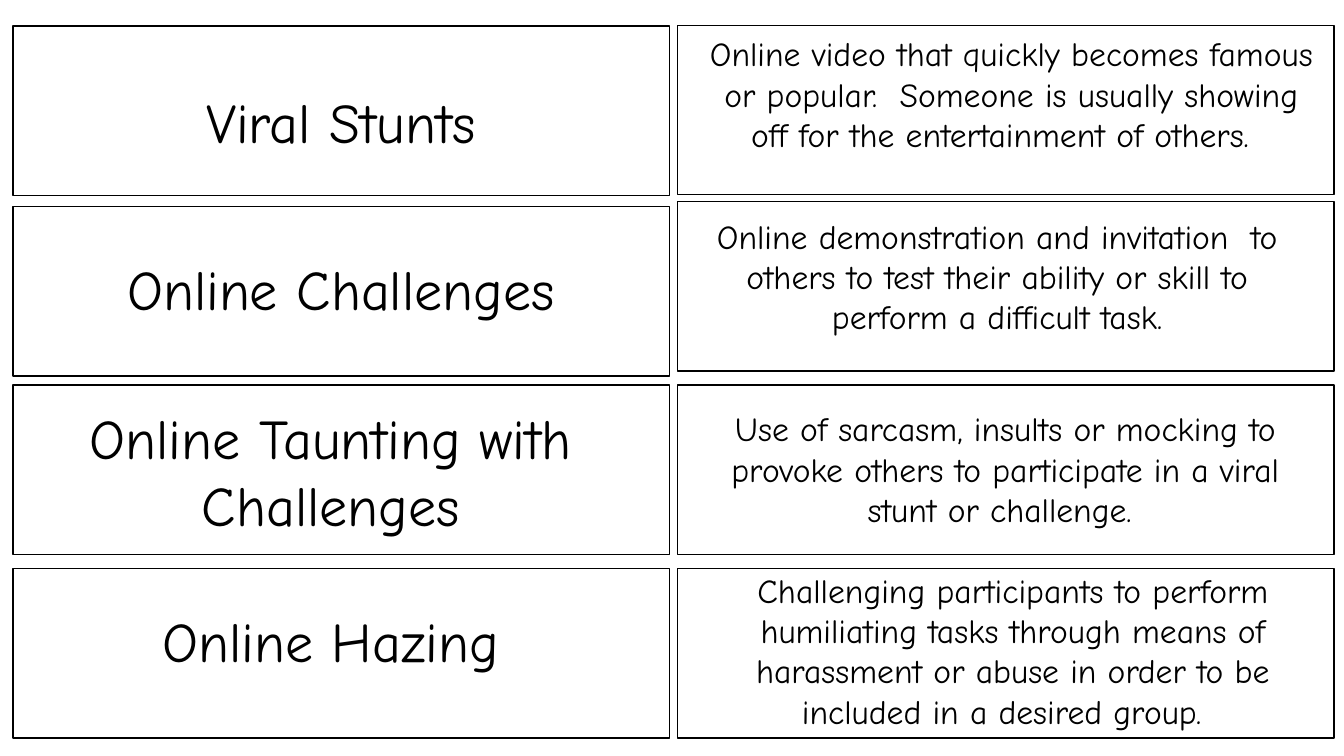
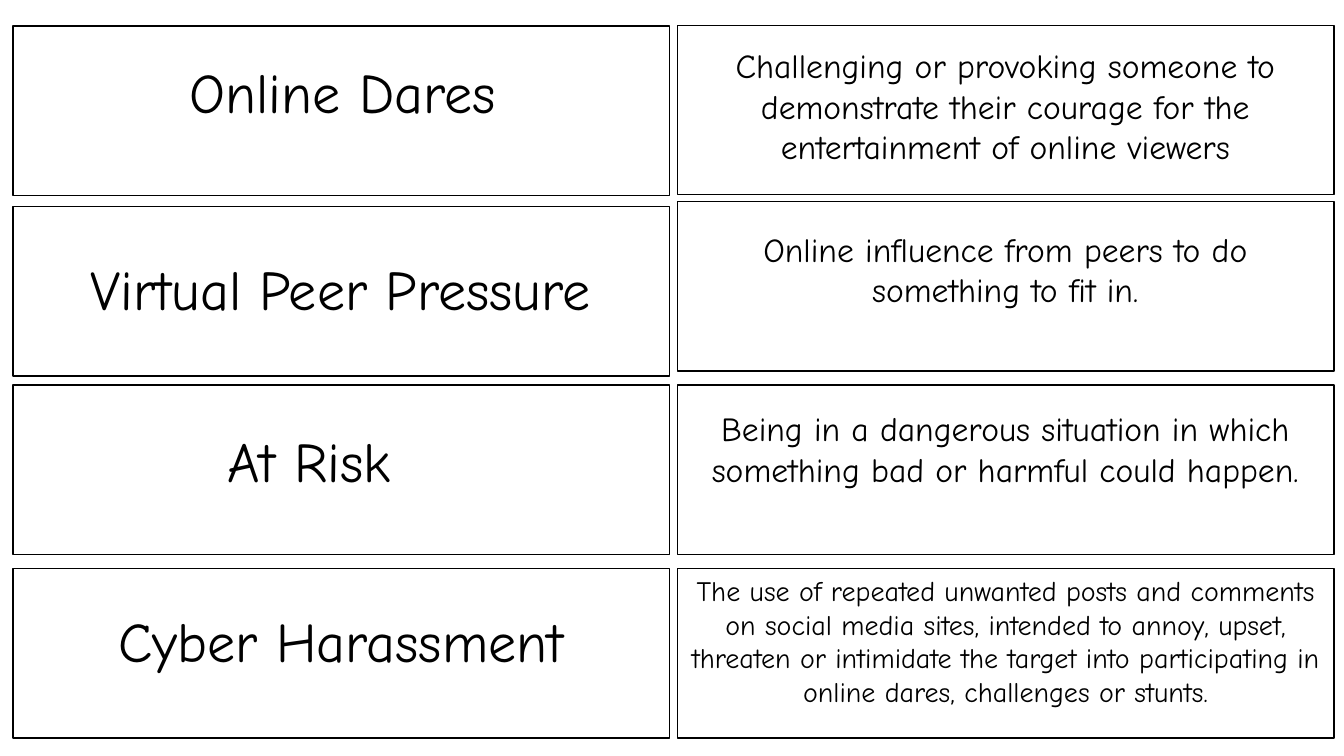
from dataclasses import dataclass

from pptx import Presentation
from pptx.dml.color import RGBColor
from pptx.enum.shapes import MSO_SHAPE as Shape
from pptx.enum.text import MSO_AUTO_SIZE as AutoSize, MSO_ANCHOR as Anchor, PP_ALIGN as Align
from pptx.util import Inches, Pt


@dataclass(frozen=True)
class Theme:
    font: str = "Comic Neue"
    ink: RGBColor = RGBColor(0x00, 0x00, 0x00)
    paper: RGBColor = RGBColor(0xFF, 0xFF, 0xFF)
    term_size: int = 40
    meaning_size: int = 24
    small_size: int = 20
    outline: int = 1


THEME = Theme()

# Card grid: left edge of each column, and the tops of its rows
CARD_WIDTH, CARD_HEIGHT = 6.51, 1.68
CARD_COLUMNS = {
    0.13: (0.26, 2.05, 3.82, 5.64),
    6.72: (0.25, 2, 3.82, 5.64),
}

# Each page: terms, then meanings, as (text, (left, top, width, height), size)
TERM, MEANING, SMALL = THEME.term_size, THEME.meaning_size, THEME.small_size
PAGES = [
    [
        ("Viral Stunts", (0.35, 0.82, 6.06, 0.77), TERM),
        ("Online Challenges", (0.35, 2.48, 6.06, 0.77), TERM),
        ("Online Taunting with Challenges", (0.25, 3.95, 6.06, 1.45), TERM),
        ("Online Hazing", (0.25, 5.97, 6.06, 0.77), TERM),
        ("Online video that quickly becomes famous or popular.  Someone is usually "
         "showing off for the entertainment of others.  ",
         (6.86, 0.28, 6.34, 1.72), MEANING),
        ("Online demonstration and invitation  to others to test their ability or "
         "skill to perform a difficult task.",
         (6.86, 2.09, 6.06, 1.31), MEANING),
        ("Use of sarcasm, insults or mocking to provoke others to participate in a "
         "viral stunt or challenge. ",
         (6.94, 4, 6.06, 1.31), MEANING),
        ("Challenging participants to perform humiliating tasks through means of "
         "harassment or abuse in order to be included in a desired group.  ",
         (6.86, 5.6, 6.37, 1.72), MEANING),
    ],
    [
        ("Online Dares", (0.37, 0.52, 6.06, 0.77), TERM),
        ("Virtual Peer Pressure", (0.35, 2.48, 6.06, 0.77), TERM),
        ("At Risk ", (0.13, 4.18, 6.06, 0.77), TERM),
        ("Cyber Harassment", (0.35, 5.97, 6.06, 0.77), TERM),
        ("Challenging or provoking someone to demonstrate their courage for the "
         "entertainment of online viewers",
         (6.94, 0.4, 6.06, 1.31), MEANING),
        ("Online influence from peers to do something to fit in.",
         (6.94, 2.22, 6.06, 0.91), MEANING),
        ("Being in a dangerous situation in which something bad or harmful could happen.",
         (6.94, 4, 6.06, 1.31), MEANING),
        ("The use of repeated unwanted posts and comments on social media sites, "
         "intended to annoy, upset, threaten or intimidate the target into "
         "participating in online dares, challenges or stunts.",
         (6.72, 5.64, 6.51, 1.78), SMALL),
    ],
]


def add_card(page, left, top):
    """Add one outlined, empty card."""
    card = page.shapes.add_shape(
        Shape.RECTANGLE, Inches(left), Inches(top), Inches(CARD_WIDTH), Inches(CARD_HEIGHT))
    card.shadow.inherit = False
    card.fill.solid()
    card.fill.fore_color.rgb = THEME.paper
    card.line.color.rgb = THEME.ink
    card.line.width = Pt(THEME.outline)


def add_label(page, text, place, size):
    """Add centred text that starts at the top of its box."""
    box = page.shapes.add_textbox(*map(Inches, place))
    frame = box.text_frame
    frame.word_wrap = True
    frame.auto_size = AutoSize.SHAPE_TO_FIT_TEXT
    frame.vertical_anchor = Anchor.TOP
    frame.text = text
    para = frame.paragraphs[0]
    para.alignment = Align.CENTER
    for span in para.runs:
        span.font.name = THEME.font
        span.font.size = Pt(size)
        span.font.color.rgb = THEME.ink


def add_page(deck, labels):
    """Add a page of cards with their labels on top."""
    page = deck.slides.add_slide(deck.slide_layouts.get_by_name("Blank"))
    for left, tops in CARD_COLUMNS.items():
        for top in tops:
            add_card(page, left, top)
    for text, place, size in labels:
        add_label(page, text, place, size)


def main():
    deck = Presentation()
    deck.slide_width = Inches(13.33)
    deck.slide_height = Inches(7.5)
    for labels in PAGES:
        add_page(deck, labels)
    deck.save("out.pptx")


if __name__ == "__main__":
    main()
